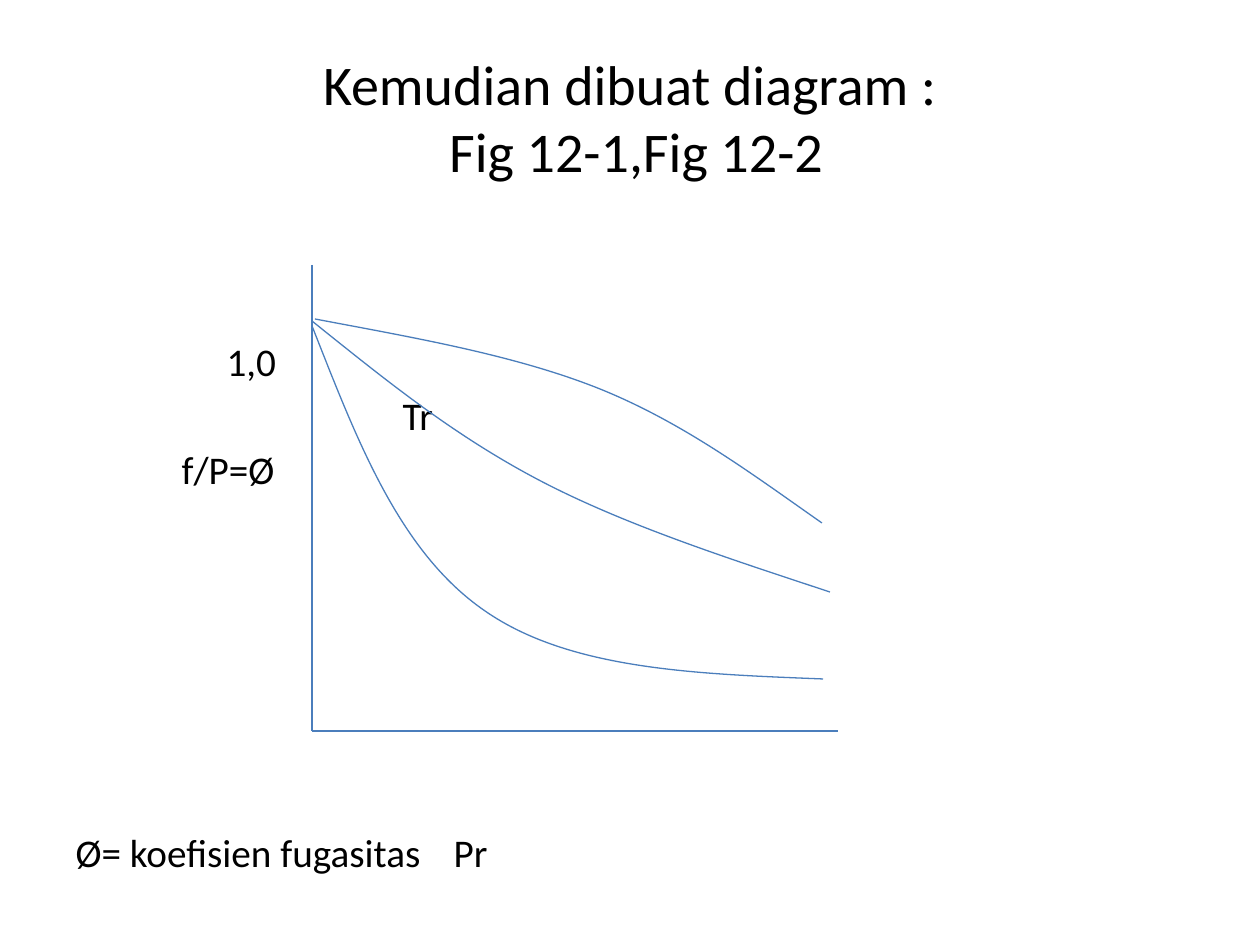
from lxml.etree import SubElement
from pptx import Presentation
from pptx.dml.color import RGBColor
from pptx.enum.shapes import MSO_CONNECTOR
from pptx.enum.text import MSO_AUTO_SIZE, MSO_ANCHOR, PP_ALIGN
from pptx.oxml.ns import qn
from pptx.util import Emu, Pt

PX = 914400 / 126
COLORS = {"text": "000000", "curve": "4B7EBC"}


def px(*lengths):
    return [Emu(round(length * PX)) for length in lengths]


def set_format(target, formats):
    for name, value in formats.items():
        setattr(target, name, value)


prs = Presentation()
prs.slide_width, prs.slide_height = px(1260, 945)
slide = prs.slides.add_slide(prs.slide_layouts[1])
title, labels = slide.placeholders

# Title and labels
for holder, box, anchor in [
    (title, (63, 38, 1134, 158), MSO_ANCHOR.MIDDLE),
    (labels, (63, 331, 1134, 575), MSO_ANCHOR.TOP),
]:
    set_format(holder, dict(zip(("left", "top", "width", "height"), px(*box))))
    set_format(holder.text_frame, {
        "word_wrap": True, "auto_size": MSO_AUTO_SIZE.NONE, "vertical_anchor": anchor})

title.text_frame.text = "Kemudian dibuat diagram :\v Fig 12-1,Fig 12-2"
title.text_frame.paragraphs[0].alignment = PP_ALIGN.CENTER

label_rows = [  # text, indent in px, space before in points
    ("1,0", 151, 4),
    ("Tr", 327, 4),
    ("f/P=Ø", 106, 4),
    ("Ø= koefisien fugasitas\tPr", 0, 192),
]
labels.text_frame.text = "\n".join(row[0] for row in label_rows)
for paragraph, (_, indent, gap) in zip(labels.text_frame.paragraphs, label_rows):
    paragraph.space_before = Pt(gap)
    properties = paragraph._p.get_or_add_pPr()
    properties.set("marL", str(px(indent)[0]))
    properties.set("indent", "0")
    SubElement(properties, qn("a:buNone"))
    if "\t" in paragraph.text:
        tabs = SubElement(properties, qn("a:tabLst"))
        SubElement(tabs, qn("a:tab"), pos=str(px(584)[0]), algn="l")

for holder, size in [(title, 32), (labels, 22.4)]:
    for paragraph in holder.text_frame.paragraphs:
        for run in paragraph.runs:
            set_format(run.font, {"name": "Calibri", "size": Pt(size)})
            run.font.color.rgb = RGBColor.from_string(COLORS["text"])

# Axes
diagram_lines = []
for end in [(312, 265), (838, 731)]:
    start = (312, 265) if end[0] == 312 else (312, 731)
    end = (312, 731) if end[0] == 312 else end
    axis = slide.shapes.add_connector(MSO_CONNECTOR.STRAIGHT, *px(*start, *end))
    SubElement(axis._element.spPr, qn("a:effectLst"))
    diagram_lines.append(axis)

# Isotherms: a start point, then two Bézier segments of three points each
isotherms = [
    [(315, 319), (415, 338), (515, 355), (600, 389), (684, 423), (752, 474), (822, 523)],
    [(312, 321), (382, 377), (450, 433), (537, 479), (622, 524), (727, 558), (830, 592)],
    [(312, 326), (357, 440), (399, 552), (485, 611), (570, 670), (697, 674), (823, 679)],
]
for points in isotherms:
    start, *controls = [px(*point) for point in points]
    builder = slide.shapes.build_freeform(*start)
    builder.add_line_segments(controls, close=False)
    isotherm = builder.convert_to_shape()
    isotherm.shadow.inherit = False
    isotherm.fill.background()
    segments = isotherm._element.xpath(".//a:lnTo")
    outline = segments[0].getparent()
    for first in range(0, len(segments), 3):
        bezier = SubElement(outline, qn("a:cubicBezTo"))
        for segment in segments[first:first + 3]:
            bezier.append(segment[0])
            outline.remove(segment)
    diagram_lines.append(isotherm)

for diagram_line in diagram_lines:
    diagram_line.line.width = Pt(0.75)
    diagram_line.line.color.rgb = RGBColor.from_string(COLORS["curve"])

prs.save("out.pptx")
